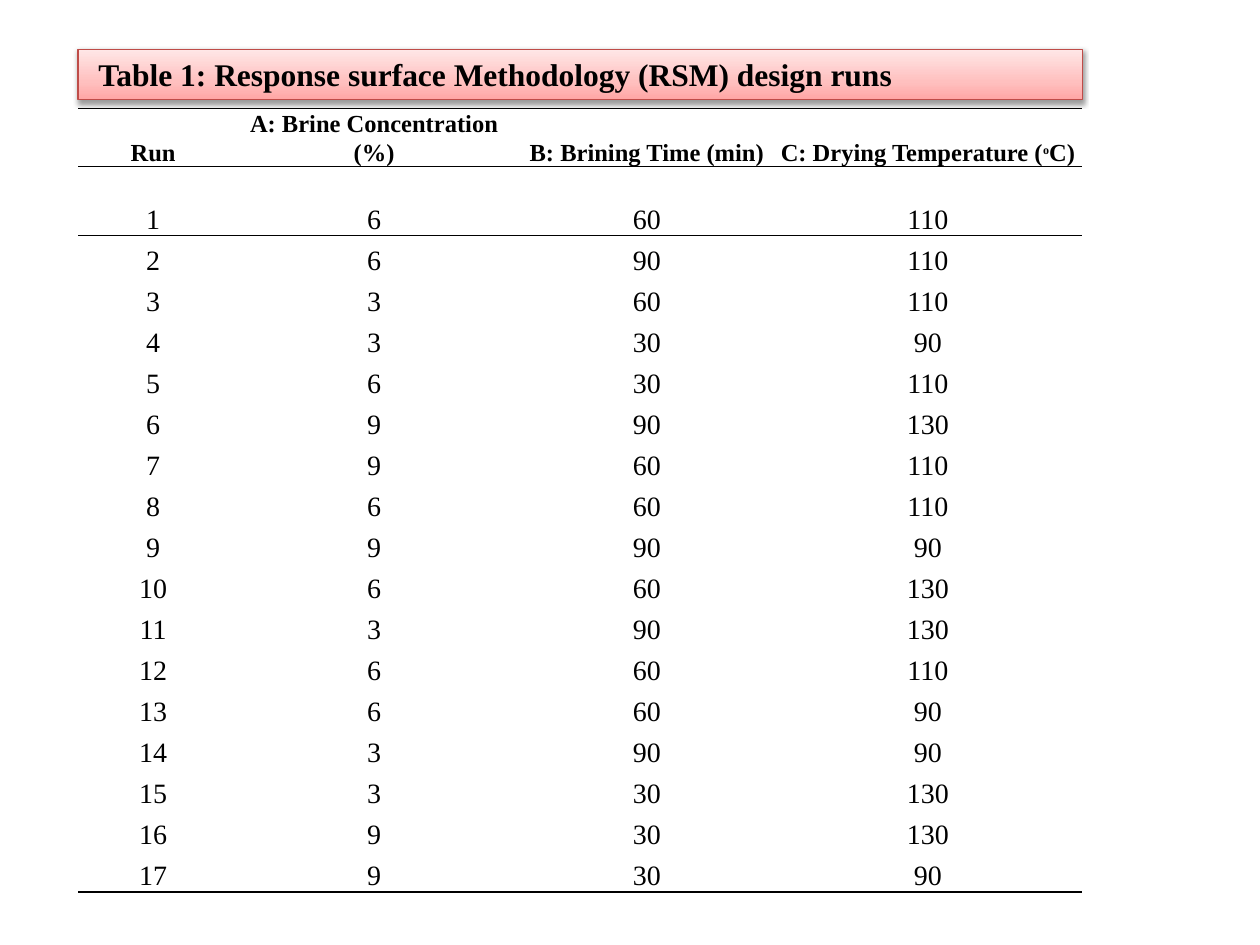
from dataclasses import dataclass

from pptx import Presentation
from pptx.dml.color import RGBColor
from pptx.enum.text import MSO_ANCHOR, PP_ALIGN
from pptx.oxml import parse_xml
from pptx.oxml.ns import qn
from pptx.util import Inches, Pt

LEFT, CENTER = PP_ALIGN.LEFT, PP_ALIGN.CENTER
MIDDLE, BOTTOM = MSO_ANCHOR.MIDDLE, MSO_ANCHOR.BOTTOM
NAMESPACE = 'xmlns:a="http://schemas.openxmlformats.org/drawingml/2006/main"'
NO_STYLE_NO_GRID = "{2D5ABB26-0587-4C30-8999-92F81FD0307C}"


@dataclass(frozen=True)
class Theme:
    font: str = "Times New Roman"
    ink: str = "000000"
    banner_line: str = "BF4C48"
    banner_stops: tuple = ((0, "FFA6A5"), (35, "FFC0BF"), (100, "FFE7E7"))
    title_size: int = 18
    header_size: int = 14
    superscript_size: int = 12
    body_size: int = 16


THEME = Theme()


def write(paragraph, text, size, bold=False, align=CENTER, spacing=None, superscript=False):
    """Append one formatted run to the paragraph."""
    paragraph.alignment = align
    paragraph.line_spacing = spacing
    run = paragraph.add_run()
    run.text = text
    run.font.name = THEME.font
    run.font.size = Pt(size)
    run.font.bold = bold
    run.font.color.rgb = RGBColor.from_string(THEME.ink)
    if superscript:
        run.font._element.set("baseline", "30000")


def add_rules(cell, edges):
    """Draw black 1 pt borders on the given edges: T before B."""
    properties = cell._tc.get_or_add_tcPr()
    for index, edge in enumerate(edges):
        properties.insert(index, parse_xml(
            f'<a:ln{edge} {NAMESPACE} w="12700"><a:solidFill>'
            f'<a:srgbClr val="{THEME.ink}"/></a:solidFill></a:ln{edge}>'))


HEADERS = ["Run", "A: Brine Concentration (%)", "B: Brining Time (min)",
           "C: Drying Temperature ("]
# Brine concentration, brining time and drying temperature of each run
RUNS = [
    (6, 60, 110), (6, 90, 110), (3, 60, 110), (3, 30, 90), (6, 30, 110), (9, 90, 130),
    (9, 60, 110), (6, 60, 110), (9, 90, 90), (6, 60, 130), (3, 90, 130), (6, 60, 110),
    (6, 60, 90), (3, 90, 90), (3, 30, 130), (9, 30, 130), (9, 30, 90),
]
LEFT_EDGE, WIDTH = Inches(0.62), Inches(7.97)
TABLE_TOP, TABLE_HEIGHT = Inches(0.86), Inches(6.22)
HEADER_HEIGHT, FIRST_RUN_HEIGHT = Inches(0.46), Inches(0.55)
COLUMN_WIDTHS = [1.19, 2.32, 2.01, 2.45]

presentation = Presentation()
presentation.slide_width, presentation.slide_height = Inches(10), Inches(7.5)
slide = presentation.slides.add_slide(presentation.slide_layouts[5])

# Design runs table
rows = [HEADERS] + [(number, *values) for number, values in enumerate(RUNS, 1)]
table = slide.shapes.add_table(
    len(rows), len(HEADERS), LEFT_EDGE, TABLE_TOP, WIDTH, TABLE_HEIGHT).table
table.first_row = table.horz_banding = False
table._tbl.tblPr.find(qn("a:tableStyleId")).text = NO_STYLE_NO_GRID

for column, width in zip(table.columns, COLUMN_WIDTHS):
    column.width = Inches(width)
run_height = (TABLE_HEIGHT - HEADER_HEIGHT - FIRST_RUN_HEIGHT) // (len(RUNS) - 1)
for row in table.rows:
    row.height = run_height
table.rows[0].height = HEADER_HEIGHT
table.rows[1].height = FIRST_RUN_HEIGHT

rules = {0: "TB", 1: "T", len(RUNS): "B"}
for row_index, values in enumerate(rows):
    is_header = row_index == 0
    size = THEME.header_size if is_header else THEME.body_size
    for column_index, value in enumerate(values):
        cell = table.cell(row_index, column_index)
        cell.margin_left = cell.margin_right = Inches(0.05)
        cell.margin_top = cell.margin_bottom = 0
        cell.vertical_anchor = BOTTOM
        cell.fill.background()
        add_rules(cell, rules.get(row_index, ""))
        write(cell.text_frame.paragraphs[0], str(value), size, bold=is_header, spacing=1.07)

temperature = table.cell(0, 3).text_frame.paragraphs[0]
write(temperature, "o", THEME.superscript_size, bold=True, spacing=1.07, superscript=True)
write(temperature, "C)", THEME.header_size, bold=True, spacing=1.07)

# Title banner with gradient and soft shadow
title = slide.shapes.title
title.left, title.top, title.width, title.height = LEFT_EDGE, Inches(0.39), WIDTH, Inches(0.4)
title.line.color.rgb = RGBColor.from_string(THEME.banner_line)
title.line.width = Pt(0.75)
stops = "".join(f'<a:gs pos="{position * 1000}"><a:srgbClr val="{color}"/></a:gs>'
                for position, color in THEME.banner_stops)
title_properties = title._element.spPr
title_properties.find(qn("a:ln")).addprevious(parse_xml(
    f'<a:gradFill {NAMESPACE} rotWithShape="1"><a:gsLst>{stops}</a:gsLst>'
    '<a:lin ang="16200000" scaled="1"/></a:gradFill>'))
title_properties.append(parse_xml(
    f'<a:effectLst {NAMESPACE}><a:outerShdw blurRad="{Pt(3.1)}" dist="{Pt(1.6)}" '
    f'dir="5400000" rotWithShape="0"><a:srgbClr val="{THEME.ink}">'
    '<a:alpha val="38000"/></a:srgbClr></a:outerShdw></a:effectLst>'))
frame = title.text_frame
frame.word_wrap = True
frame.vertical_anchor = MIDDLE
frame.margin_left, frame.margin_right = Inches(0.16), Inches(0.1)
frame.margin_top = frame.margin_bottom = Inches(0.05)
write(frame.paragraphs[0], "Table 1: Response surface Methodology (RSM) design runs",
      THEME.title_size, bold=True, align=LEFT)

presentation.save("out.pptx")
